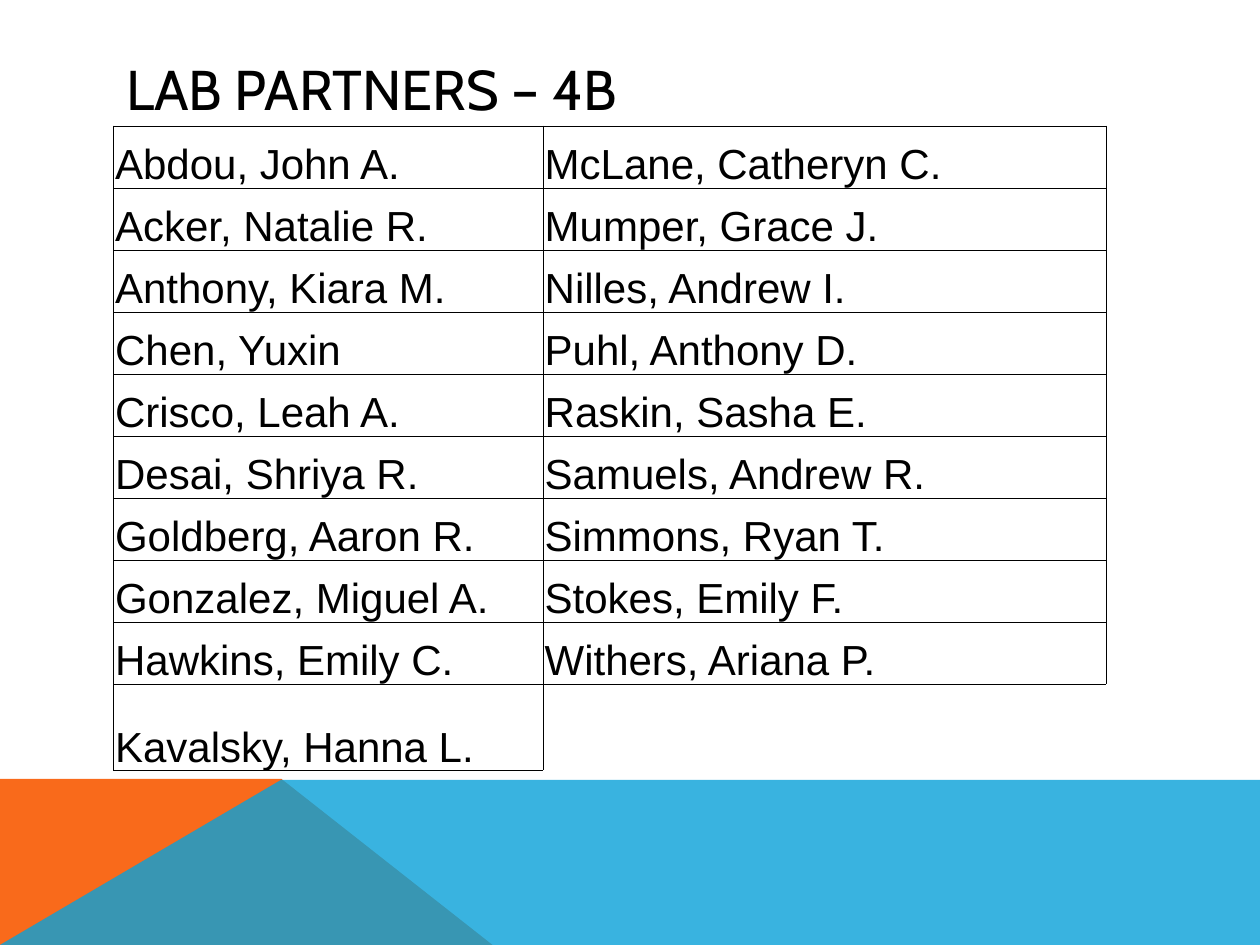
"""Build the lab partners slide with its two-column table of names."""
from lxml.etree import SubElement
from pptx import Presentation
from pptx.dml.color import RGBColor
from pptx.enum.text import MSO_ANCHOR, MSO_AUTO_SIZE, PP_ALIGN
from pptx.oxml.ns import qn
from pptx.util import Cm, Pt

BLACK = RGBColor(0x00, 0x00, 0x00)
ORANGE = RGBColor(0xF9, 0x6A, 0x1B)
BLUE = RGBColor(0x08, 0xA1, 0xD9)

LEFT = ["Abdou, John A.", "Acker, Natalie R.", "Anthony, Kiara M.",
        "Chen, Yuxin", "Crisco, Leah A.", "Desai, Shriya R.",
        "Goldberg, Aaron R.", "Gonzalez, Miguel A.", "Hawkins, Emily C.",
        "Kavalsky, Hanna L."]
RIGHT = ["McLane, Catheryn C.", "Mumper, Grace J.", "Nilles, Andrew I.",
         "Puhl, Anthony D.", "Raskin, Sasha E.", "Samuels, Andrew R.",
         "Simmons, Ryan T.", "Stokes, Emily F.", "Withers, Ariana P.", ""]


def add_band(slide, points, color):
    start, *rest = [(Cm(x), Cm(y)) for x, y in points]
    pen = slide.shapes.build_freeform(*start)
    pen.add_line_segments(rest, close=True)
    band = pen.convert_to_shape()
    band.shadow.inherit = False
    band.fill.solid()
    band.fill.fore_color.rgb = color
    band.line.fill.background()
    return band


def add_border(cell, sides):
    props = cell._tc.get_or_add_tcPr()
    for place, side in enumerate(sides):
        line = props.makeelement(qn("a:ln" + side), {"w": str(Pt(0.5))})
        fill = SubElement(line, qn("a:solidFill"))
        SubElement(fill, qn("a:srgbClr"), val=str(BLACK))
        props.insert(place, line)


prs = Presentation()
prs.slide_width, prs.slide_height = Cm(25.4), Cm(19.05)
slide = prs.slides.add_slide(prs.slide_layouts[5])

add_band(slide, [(0, 19.05), (0, 15.7), (5.67, 15.7), (9.93, 19.05)], ORANGE)
blue = add_band(slide, [(0, 19.05), (5.67, 15.72), (25.4, 15.72), (25.4, 19.05)], BLUE)
tint = blue.fill._xPr.find(qn("a:solidFill"))[0]
SubElement(tint, qn("a:alpha"), val="80000")

title = slide.shapes.title
title.left, title.top, title.width, title.height = Cm(2.29), Cm(1.02), Cm(20.88), Cm(1.52)
frame = title.text_frame
frame.text = "LAB PARTNERS – 4B"
frame.auto_size = MSO_AUTO_SIZE.NONE
frame.vertical_anchor = MSO_ANCHOR.MIDDLE
head = frame.paragraphs[0]
head.alignment = PP_ALIGN.LEFT
head.font.name, head.font.size = "Cabin", Pt(32)
head.font.color.rgb = BLACK

table = slide.shapes.add_table(len(LEFT), 2, Cm(2.29), Cm(2.54), Cm(20.02), Cm(13)).table
table.first_row = table.horz_banding = False
table.columns[0].width, table.columns[1].width = Cm(8.66), Cm(11.36)
for row in table.rows:
    row.height = Cm(1.25)
table.rows[len(LEFT) - 1].height = Cm(1.75)

for row, names in enumerate(zip(LEFT, RIGHT)):
    for col, name in enumerate(names):
        cell = table.cell(row, col)
        cell.fill.background()
        add_border(cell, "LRTB" if name else "LT")
        if not name:
            continue
        cell.text = name
        cell.vertical_anchor = MSO_ANCHOR.BOTTOM
        cell.margin_left = cell.margin_right = cell.margin_top = Cm(0.03)
        cell.margin_bottom = 0
        font = cell.text_frame.paragraphs[0].font
        font.name, font.size = "Arial", Pt(24)
        font.color.rgb = BLACK

prs.save("out.pptx")
